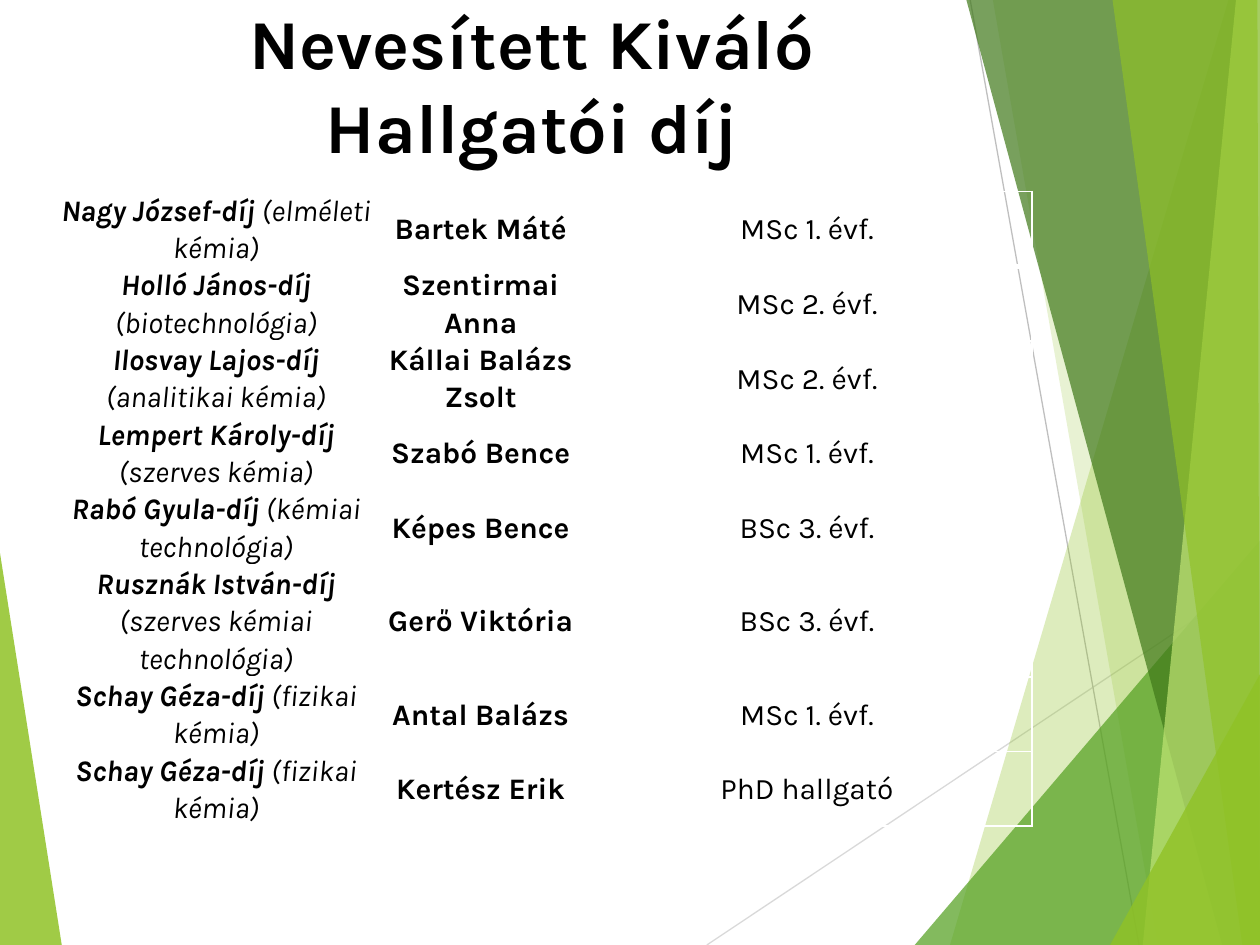
import dataclasses
import typing

import lxml.etree
import pptx
import pptx.dml.color
import pptx.enum.shapes
import pptx.enum.text
import pptx.oxml.ns
import pptx.util

Inches = pptx.util.Inches
Pt = pptx.util.Pt
qn = pptx.oxml.ns.qn

FONT = "Karla"
COLORS = {
    "black": "000000",
    "white": "FFFFFF",
    "lime": "90C226",
    "green": "54A021",
    "forest": "3F7819",
    "pale": "C0E474",
    "light_gray": "D9D9D9",
    "gray": "BFBFBF",
}
COLUMN_WIDTHS = (2.59, 1.61, 3.57)
ROW_HEIGHT = 0.45


@dataclasses.dataclass
class Facet:
    color: str
    opacity: int
    points: list[tuple[float, float]]


@dataclasses.dataclass
class Ray:
    color: str
    start: tuple[float, float]
    end: tuple[float, float]


@dataclasses.dataclass
class Award:
    name: str
    field: str
    student: str
    level: str


LEFT_FACET = Facet("lime", 85, [(0, 4.39), (0.49, 7.5), (0, 7.5)])
RAYS = [
    Ray("light_gray", (5.61, 7.5), (10, 4.57)),
    Ray("gray", (7.7, 0), (9.04, 7.5)),
]
RIGHT_FACETS = [
    Facet("lime", 30, [(9.75, 0), (7.54, 7.5), (10, 7.5), (10, 0)]),
    Facet("lime", 20, [(7.88, 0), (9.19, 7.5), (10, 7.5), (10, 0)]),
    Facet("green", 72, [(7.26, 7.5), (10, 4.29), (10, 7.5)]),
    Facet("forest", 70, [(7.67, 0), (9.7, 7.5), (10, 7.5), (10, 0)]),
    Facet("pale", 70, [(9.81, 0), (9.07, 7.5), (10, 7.5), (10, 0)]),
    Facet("lime", 65, [(8.83, 0), (9.86, 7.5), (10, 7.5), (9.98, 0)]),
    Facet("lime", 80, [(8.81, 7.5), (10, 5.35), (10, 7.5)]),
]
AWARDS = [
    Award("Nagy József-díj", "(elméleti kémia)", "Bartek Máté", "MSc 1. évf."),
    Award("Holló János-díj", "(biotechnológia)", "Szentirmai Anna", "MSc 2. évf."),
    Award("Ilosvay Lajos-díj", "(analitikai kémia)", "Kállai Balázs Zsolt", "MSc 2. évf."),
    Award("Lempert Károly-díj", "(szerves kémia)", "Szabó Bence", "MSc 1. évf."),
    Award("Rabó Gyula-díj", "(kémiai technológia)", "Képes Bence", "BSc 3. évf."),
    Award("Rusznák István-díj", "(szerves kémiai technológia)", "Gerő Viktória", "BSc 3. évf."),
    Award("Schay Géza-díj", "(fizikai kémia)", "Antal Balázs", "MSc 1. évf."),
    Award("Schay Géza-díj", "(fizikai kémia)", "Kertész Erik", "PhD hallgató"),
]


def rgb(color: str) -> pptx.dml.color.RGBColor:
    return pptx.dml.color.RGBColor.from_string(COLORS[color])


def add_facet(page: typing.Any, facet: Facet) -> None:
    start, *others = [(Inches(x), Inches(y)) for x, y in facet.points]
    builder = page.shapes.build_freeform(*start)
    builder.add_line_segments(others, close=True)
    shape = builder.convert_to_shape()
    shape.shadow.inherit = False
    shape.line.fill.background()
    shape.fill.solid()
    shape.fill.fore_color.rgb = rgb(facet.color)
    color = shape.element.spPr.find(qn("a:solidFill"))[0]
    lxml.etree.SubElement(color, qn("a:alpha"), val=str(facet.opacity * 1000))


def add_ray(page: typing.Any, ray: Ray) -> None:
    ends = [Inches(value) for value in ray.start + ray.end]
    line = page.shapes.add_connector(pptx.enum.shapes.MSO_CONNECTOR.STRAIGHT, *ends)
    line.line.color.rgb = rgb(ray.color)
    line.line.width = Pt(0.75)
    lxml.etree.SubElement(line.element.spPr, qn("a:effectLst"))


def add_run(para: typing.Any, text: str, size: float, bold: bool = False, italic: bool = False) -> None:
    span = para.add_run()
    span.text = text
    span.font.name = FONT
    span.font.size = Pt(size)
    span.font.bold = bold
    span.font.italic = italic
    span.font.color.rgb = rgb("black")


def add_title(page: typing.Any, text: str) -> None:
    title = page.shapes.title
    title.left, title.top = Inches(0.67), Inches(-0.05)
    title.width, title.height = Inches(7.1), Inches(1.43)
    title.element.getparent().append(title.element)
    frame = title.text_frame
    frame.word_wrap = True
    frame.auto_size = pptx.enum.text.MSO_AUTO_SIZE.NONE
    frame.vertical_anchor = pptx.enum.text.MSO_ANCHOR.BOTTOM
    para = frame.paragraphs[0]
    para.alignment = pptx.enum.text.PP_ALIGN.CENTER
    add_run(para, text, 40, bold=True)


def set_borders(cell: typing.Any, bottom_width: float) -> None:
    properties = cell._tc.get_or_add_tcPr()
    for side, width in (("L", 1), ("R", 1), ("T", 1), ("B", bottom_width)):
        border = lxml.etree.SubElement(properties, qn(f"a:ln{side}"), w=str(Pt(width)))
        fill = lxml.etree.SubElement(border, qn("a:solidFill"))
        lxml.etree.SubElement(fill, qn("a:srgbClr"), val=COLORS["white"])


def format_cell(cell: typing.Any, bottom_width: float) -> typing.Any:
    set_borders(cell, bottom_width)
    cell.fill.background()
    cell.margin_left = cell.margin_right = Inches(0.05)
    cell.margin_top = cell.margin_bottom = 0
    cell.vertical_anchor = pptx.enum.text.MSO_ANCHOR.MIDDLE
    para = cell.text_frame.paragraphs[0]
    para.alignment = pptx.enum.text.PP_ALIGN.CENTER
    para.line_spacing = 1.07
    para.space_after = Pt(8)
    return para


def add_awards(page: typing.Any, awards: list[Award]) -> None:
    table = page.shapes.add_table(
        len(awards), len(COLUMN_WIDTHS), Inches(0.42), Inches(1.52),
        Inches(sum(COLUMN_WIDTHS)), Inches(ROW_HEIGHT * len(awards)),
    ).table
    table.first_row = table.horz_banding = False
    for column, width in zip(table.columns, COLUMN_WIDTHS):
        column.width = Inches(width)
    for index, (row, award) in enumerate(zip(table.rows, awards)):
        row.height = Inches(ROW_HEIGHT)
        bottom_width = 3 if index == 0 else 1
        prize, student, level = [format_cell(cell, bottom_width) for cell in row.cells]
        add_run(prize, award.name, 17, bold=True, italic=True)
        add_run(prize, f" {award.field}", 17, italic=True)
        add_run(student, award.student, 17, bold=True)
        add_run(level, award.level, 17)


def main() -> None:
    deck = pptx.Presentation()
    deck.slide_width, deck.slide_height = Inches(10), Inches(7.5)
    page = deck.slides.add_slide(deck.slide_layouts[5])
    add_facet(page, LEFT_FACET)
    for ray in RAYS:
        add_ray(page, ray)
    for facet in RIGHT_FACETS:
        add_facet(page, facet)
    add_title(page, "Nevesített Kiváló Hallgatói díj")
    add_awards(page, AWARDS)
    deck.save("out.pptx")


if __name__ == "__main__":
    main()
